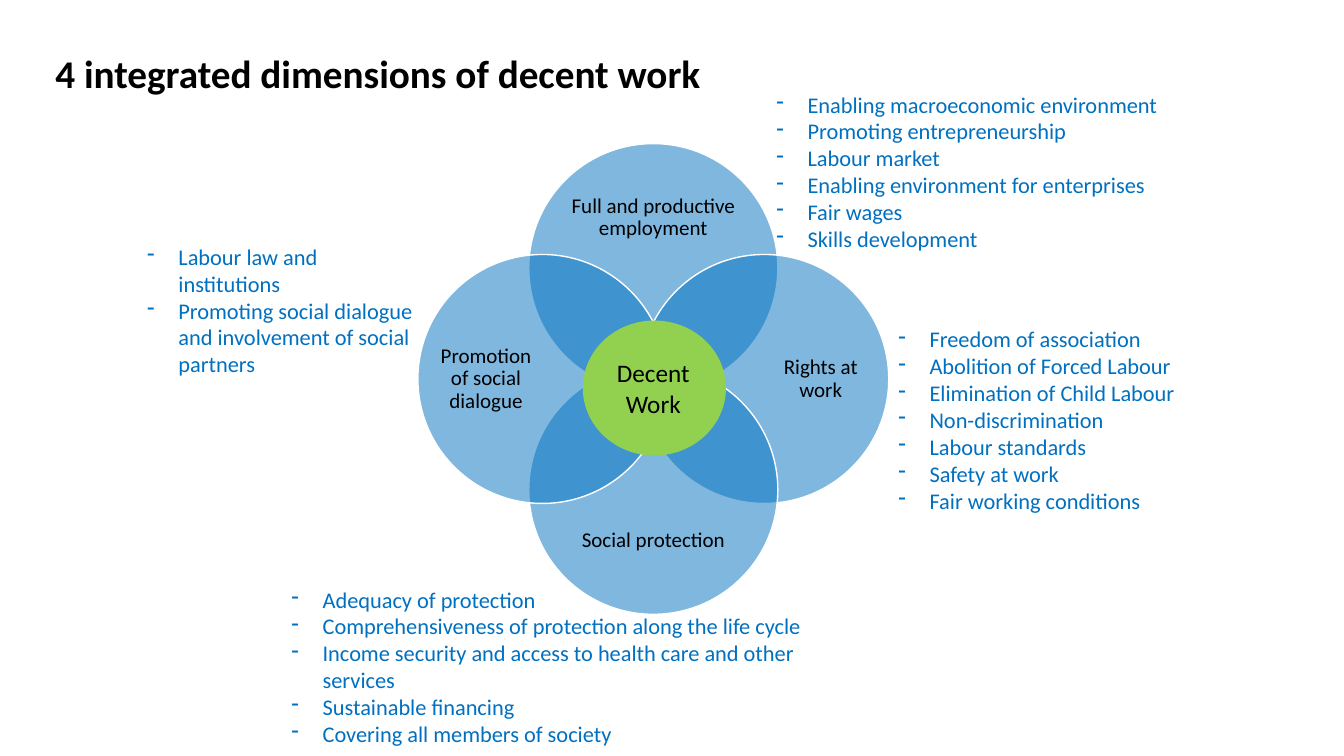
from dataclasses import dataclass

from lxml.etree import SubElement
from pptx import Presentation
from pptx.dml.color import RGBColor as RGB
from pptx.enum.shapes import MSO_SHAPE as SHAPE
from pptx.enum.text import MSO_ANCHOR as ANCHOR, MSO_AUTO_SIZE as AUTO, PP_ALIGN as ALIGN
from pptx.oxml.ns import qn
from pptx.util import Inches, Pt


@dataclass(frozen=True)
class Theme:
    font: str = "Calibri"
    black: RGB = RGB(0x00, 0x00, 0x00)
    white: RGB = RGB(0xFF, 0xFF, 0xFF)
    blue: RGB = RGB(0x00, 0x70, 0xC0)
    green: RGB = RGB(0x92, 0xD0, 0x50)
    title_size: int = 28
    core_size: int = 18
    list_size: int = 16
    label_size: int = 15


class SlideBuilder:
    def __init__(self, slide, theme):
        self.slide, self.theme = slide, theme

    def apply(self, target, formats):
        for name, value in formats.items():
            setattr(target, name, value)

    def place(self, shape, box):
        names = ("left", "top", "width", "height")
        self.apply(shape, dict(zip(names, map(Inches, box))))

    def frame(self, shape, anchor=ANCHOR.TOP, side=0.1, edge=0.05):
        self.apply(shape.text_frame, {
            "word_wrap": True, "auto_size": AUTO.NONE, "vertical_anchor": anchor,
            "margin_left": Inches(side), "margin_right": Inches(side),
            "margin_top": Inches(edge), "margin_bottom": Inches(edge)})
        return shape.text_frame

    def style(self, paragraph, size, color, align=ALIGN.LEFT, spacing=1.0, bold=False):
        self.apply(paragraph, {"alignment": align, "line_spacing": spacing,
                               "space_before": Pt(0), "space_after": Pt(0)})
        self.apply(paragraph.font, {"name": self.theme.font, "size": Pt(size), "bold": bold})
        paragraph.font.color.rgb = color

    def title(self, text, box):
        heading = self.slide.shapes.title
        self.place(heading, box)
        heading.text = text
        paragraph = self.frame(heading, ANCHOR.MIDDLE).paragraphs[0]
        self.style(paragraph, self.theme.title_size, self.theme.black, spacing=0.9, bold=True)

    def disc(self, parent, kind, box, color, opacity=None):
        disc = parent.add_shape(kind, *map(Inches, box))
        disc.shadow.inherit = False
        disc.fill.solid()
        disc.fill.fore_color.rgb = color
        if opacity is None:
            disc.line.fill.background()
        else:
            tint = disc.fill._xPr.find(qn("a:solidFill"))[0]
            SubElement(tint, qn("a:alpha")).set("val", str(opacity * 1000))
            disc.line.color.rgb = self.theme.white
            disc.line.width = Pt(1)

    def label(self, parent, text, box, size, spacing=1.0, **frame_formats):
        label = parent.add_textbox(*map(Inches, box))
        paragraph = self.frame(label, **frame_formats).paragraphs[0]
        paragraph.text = text
        self.style(paragraph, size, self.theme.black, ALIGN.CENTER, spacing)

    def dash_list(self, placeholder_idx, items, box):
        points = self.slide.placeholders[placeholder_idx]
        self.place(points, box)
        frame = self.frame(points)
        frame.text = "\n".join(items)
        for paragraph in frame.paragraphs:
            props = paragraph._p.get_or_add_pPr()
            props.set("marL", str(Inches(0.31)))
            props.set("indent", str(-Inches(0.31)))
            SubElement(props, qn("a:buFontTx"))
            SubElement(props, qn("a:buChar")).set("char", "-")
            self.style(paragraph, self.theme.list_size, self.theme.blue)
        # Lists lie in front of the circles
        self.slide.shapes.element.append(points.element)


# Label, direction from the centre, label size
DIMENSIONS = [
    ("Full and productive employment", (0, -1), (1.9, 0.79)),
    ("Rights at work", (1, 0), (0.95, 1.9)),
    ("Social protection", (0, 1), (1.9, 0.79)),
    ("Promotion of social dialogue", (-1, 0), (0.95, 1.9)),
]
CENTRE_X, CENTRE_Y = 6.48, 3.76
DIAMETER, CIRCLE_REACH = 2.47, 1.1
LABEL_REACH_X, LABEL_REACH_Y = 1.66, 1.6

ASPECTS = [
    (["Freedom of association", "Abolition of Forced Labour",
      "Elimination of Child Labour", "Non-discrimination", "Labour standards",
      "Safety at work", "Fair working conditions"], (8.81, 3.18, 3.01, 1.99)),
    (["Enabling macroeconomic environment", "Promoting entrepreneurship",
      "Labour market", "Enabling environment for enterprises", "Fair wages",
      "Skills development"], (7.6, 0.85, 4.06, 1.72)),
    (["Labour law and institutions",
      "Promoting social dialogue and involvement of social partners"],
     (1.36, 2.36, 2.86, 1.45)),
    (["Adequacy of protection", "Comprehensiveness of protection along the life cycle",
      "Income security and access to health care and other services",
      "Sustainable financing", "Covering all members of society"],
     (2.79, 5.76, 5.35, 1.72)),
]


def centred(x, y, width, height):
    return x - width / 2, y - height / 2, width, height


def main():
    deck = Presentation()
    deck.slide_width, deck.slide_height = Inches(13.33), Inches(7.5)
    # The comparison layout offers a title and four body placeholders
    slide = deck.slides.add_slide(deck.slide_layouts.get_by_name("Comparison"))
    theme = Theme()
    builder = SlideBuilder(slide, theme)

    builder.title("4 integrated dimensions of decent work", (0.45, 0.03, 11.5, 1.45))

    # Four overlapping dimensions
    venn = slide.shapes.add_group_shape().shapes
    for text, (dx, dy), label_size in DIMENSIONS:
        circle = centred(CENTRE_X + dx * CIRCLE_REACH, CENTRE_Y + dy * CIRCLE_REACH,
                         DIAMETER, DIAMETER)
        builder.disc(venn, SHAPE.OVAL, circle, theme.blue, opacity=50)
        label = centred(CENTRE_X + dx * LABEL_REACH_X, CENTRE_Y + dy * LABEL_REACH_Y,
                        *label_size)
        builder.label(venn, text, label, theme.label_size, spacing=0.9,
                      anchor=ANCHOR.MIDDLE, side=0, edge=0)

    # Shared core
    builder.disc(slide.shapes, SHAPE.FLOWCHART_CONNECTOR, (5.78, 3.18, 1.42, 1.34), theme.green)
    builder.label(slide.shapes, "Decent Work", (5.83, 3.5, 1.3, 0.71), theme.core_size)

    # Aspects of each dimension
    for placeholder_idx, (items, box) in enumerate(ASPECTS, start=1):
        builder.dash_list(placeholder_idx, items, box)

    deck.save("out.pptx")


if __name__ == "__main__":
    main()
